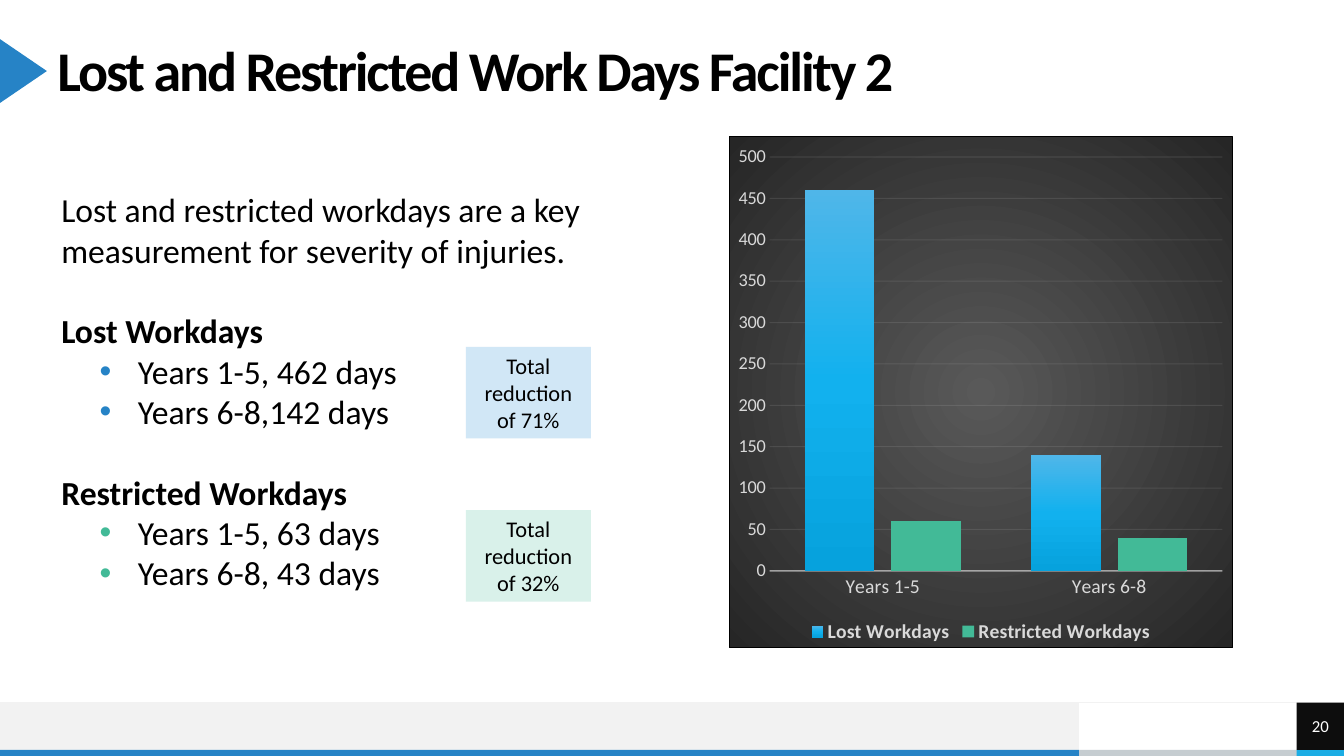
from dataclasses import dataclass

from lxml import etree as et
from pptx import Presentation
from pptx import util as u
from pptx.chart import data as cd
from pptx.dml import color as co
from pptx.enum import chart as ch, shapes as sh, text as tx
from pptx.oxml import ns

FONT = "Calibri"
BLUE, GREEN, PALE, BLACK = "2683C6", "42BA97", "F2F2F2", "000000"
SOFT = "D9D9D9"  # chart text
GAP = 28.8  # one line of body text, in points


@dataclass
class Block:
    left: float
    top: float
    width: float
    height: float
    fill: str
    text: str = ""
    size: int = 16
    ink: str = BLACK
    inset: float = 0.1
    kind: sh.MSO_SHAPE = sh.MSO_SHAPE.RECTANGLE
    turn: int = 0


@dataclass
class Line:
    text: str
    bold: bool = False
    dot: str = ""
    gap: float = 0


def tint(code: str) -> co.RGBColor:
    return co.RGBColor.from_string(code)


def add(root, tag: str, **attrs):
    return et.SubElement(root, ns.qn(tag), attrs)


def style(font, size: float, ink: str, bold: bool = False) -> None:
    font.name, font.size, font.bold = FONT, u.Pt(size), bold
    font.color.rgb = tint(ink)


def write(para, text: str, *, size: float = 24, ink: str = BLACK, bold: bool = False,
          align=tx.PP_ALIGN.LEFT, track: int = 0) -> None:
    run = para.add_run()
    run.text = text
    style(run.font, size, ink, bold)
    para.alignment = align
    if track:
        run.font._element.set("spc", str(track))


def set_frame(frame, inset: float, anchor) -> None:
    frame.word_wrap = True
    frame.vertical_anchor = anchor
    frame.margin_left = frame.margin_right = u.Inches(inset)
    frame.margin_top = frame.margin_bottom = u.Inches(inset / 2)


def add_box(slide, left: float, top: float, width: float, height: float, inset: float, anchor):
    box = slide.shapes.add_textbox(*map(u.Inches, (left, top, width, height)))
    set_frame(box.text_frame, inset, anchor)
    return box.text_frame


def draw_block(slide, b: Block) -> None:
    shape = slide.shapes.add_shape(b.kind, *map(u.Inches, (b.left, b.top, b.width, b.height)))
    shape.shadow.inherit = False
    shape.fill.solid()
    shape.fill.fore_color.rgb = tint(b.fill)
    shape.line.fill.background()
    shape.rotation = b.turn
    if b.text:
        set_frame(shape.text_frame, b.inset, tx.MSO_ANCHOR.MIDDLE)
        write(shape.text_frame.paragraphs[0], b.text, size=b.size, ink=b.ink,
              align=tx.PP_ALIGN.CENTER)


def draw_line(para, line: Line) -> None:
    write(para, line.text, bold=line.bold)
    para.space_before = u.Pt(line.gap)
    props = para._p.get_or_add_pPr()
    left, hang = (0.88, -0.38) if line.dot else (0.12, 0)
    props.set("marL", str(u.Inches(left)))
    props.set("indent", str(u.Inches(hang)))
    if line.dot:
        add(add(props, "a:buClr"), "a:srgbClr", val=line.dot)
        add(props, "a:buFont", typeface="Arial")
        add(props, "a:buChar", char="•")


def blend(props, stops: dict[int, str], angle: int | None = None) -> None:
    """Linear gradient at an angle, or a round one from the centre."""
    grad = et.Element(ns.qn("a:gradFill"), rotWithShape="1")
    props.insert(0, grad)
    steps = add(grad, "a:gsLst")
    for spot, code in stops.items():
        add(add(steps, "a:gs", pos=str(spot * 1000)), "a:srgbClr", val=code)
    if angle is None:
        rect = dict.fromkeys("ltrb", "50000")
        add(add(grad, "a:path", path="circle"), "a:fillToRect", **rect)
    else:
        add(grad, "a:lin", ang=str(angle * 60000), scaled="0")


def rule(line, code: str, width: float) -> None:
    line.color.rgb = tint(code)
    line.width = u.Pt(width)


def draw_chart(slide) -> None:
    data = cd.CategoryChartData()
    data.categories = ["Years 1-5", "Years 6-8"]
    data.add_series("Lost Workdays", (460, 140))
    data.add_series("Restricted Workdays", (60, 40))
    chart = slide.shapes.add_chart(ch.XL_CHART_TYPE.COLUMN_CLUSTERED,
                                   *map(u.Inches, (7.23, 1.35, 5, 5.08)), data).chart
    style(chart.font, 10, BLACK)
    chart.has_title = False
    chart.has_legend = True
    chart.legend.position = ch.XL_LEGEND_POSITION.BOTTOM
    chart.legend.include_in_layout = False
    style(chart.legend.font, 14, SOFT, True)

    # Axes
    cats, vals = chart.category_axis, chart.value_axis
    for axis, size in ((cats, 14), (vals, 13)):
        axis.major_tick_mark = axis.minor_tick_mark = ch.XL_TICK_MARK.NONE
        style(axis.tick_labels.font, size, SOFT)
    vals.minimum_scale, vals.maximum_scale, vals.major_unit = 0, 500, 50
    vals.format.line.fill.background()
    rule(cats.format.line, PALE, 1)
    rule(vals.major_gridlines.format.line, PALE, 0.75)
    root = chart.element
    for part, clear in (("catAx", 54), ("majorGridlines", 10)):
        for hue in root.xpath(f"//c:{part}/c:spPr//a:srgbClr"):
            add(hue, "a:alpha", val=str(clear * 1000))

    # Columns
    plot = chart.plots[0]
    plot.gap_width, plot.overlap, plot.vary_by_categories = 100, -24, False
    lost, limit = plot.series
    lost.invert_if_negative = limit.invert_if_negative = False
    limit.format.fill.solid()
    limit.format.fill.fore_color.rgb = tint(GREEN)
    blend(root.xpath("//c:ser")[0].get_or_add_spPr(),
          {0: "4FB6E9", 50: "12B1EE", 100: "06A2DD"}, 90)

    # Plot area place
    area = root.xpath("//c:plotArea")[0]
    for old in area.findall(ns.qn("c:layout")):
        area.remove(old)
    place = et.Element(ns.qn("c:layout"))
    area.insert(0, place)
    spot = add(place, "c:manualLayout")
    for key, val in (("layoutTarget", "inner"), ("xMode", "edge"), ("yMode", "edge"),
                     ("x", "0.08"), ("y", "0.04"), ("w", "0.9"), ("h", "0.81")):
        add(spot, f"c:{key}", val=val)

    # Dark ground and border
    ground = et.Element(ns.qn("c:spPr"))
    root.xpath("c:chart")[0].addnext(ground)
    blend(ground, {0: "595959", 100: "262626"})
    edge = add(ground, "a:ln", w=str(u.Pt(0.75)))
    add(add(edge, "a:solidFill"), "a:srgbClr", val=BLACK)


BLOCKS = [
    # Footer
    Block(10.7, 7.44, 2.17, 0.06, "C6CDD1"),
    Block(0, 6.97, 10.7, 0.47, PALE),
    Block(0, 7.44, 10.7, 0.06, BLUE),
    Block(12.86, 7.44, 0.47, 0.06, "1CADE4"),
    Block(12.86, 6.97, 0.47, 0.47, "0D0D0D", "20", 12, "FFFFFF", 0),
    # Title marker
    Block(-0.09, 0.47, 0.64, 0.47, BLUE, kind=sh.MSO_SHAPE.ISOSCELES_TRIANGLE, turn=90),
    # Callouts
    Block(4.62, 3.44, 1.24, 0.91, "D1E7F6", "Total reduction of 71%"),
    Block(4.62, 5.06, 1.24, 0.91, "D9F1EA", "Total reduction of 32%"),
]
LINES = [
    Line("Lost and restricted workdays are a key measurement for severity of injuries."),
    Line("Lost Workdays", bold=True, gap=GAP),
    Line("Years 1-5, 462 days", dot=BLUE),
    Line("Years 6-8,142 days", dot=BLUE),
    Line("Restricted Workdays", bold=True, gap=GAP),
    Line("Years 1-5, 63 days", dot=GREEN),
    Line("Years 6-8, 43 days", dot=GREEN),
]


def main() -> None:
    deck = Presentation()
    deck.slide_width, deck.slide_height = u.Inches(13.33), u.Inches(7.5)
    slide = deck.slides.add_slide(deck.slide_layouts[6])

    # Footer rule
    wire = slide.shapes.add_connector(sh.MSO_CONNECTOR.STRAIGHT, u.Inches(13.33),
                                      u.Inches(6.97), 0, u.Inches(6.97))
    rule(wire.line, PALE, 0.5)
    add(wire._element.spPr, "a:effectLst")

    # Title
    head = add_box(slide, 0.57, 0.49, 12.39, 0.47, 0, tx.MSO_ANCHOR.MIDDLE).paragraphs[0]
    head.line_spacing = 0.9
    write(head, "Lost and Restricted Work Days Facility 2", size=40, bold=True, track=-150)

    # Body text
    body = add_box(slide, 0.39, 1.83, 6.67, 4.14, 0.1, tx.MSO_ANCHOR.TOP)
    for i, line in enumerate(LINES):
        draw_line(body.add_paragraph() if i else body.paragraphs[0], line)

    draw_chart(slide)
    for block in BLOCKS:
        draw_block(slide, block)
    deck.save("out.pptx")


if __name__ == "__main__":
    main()
